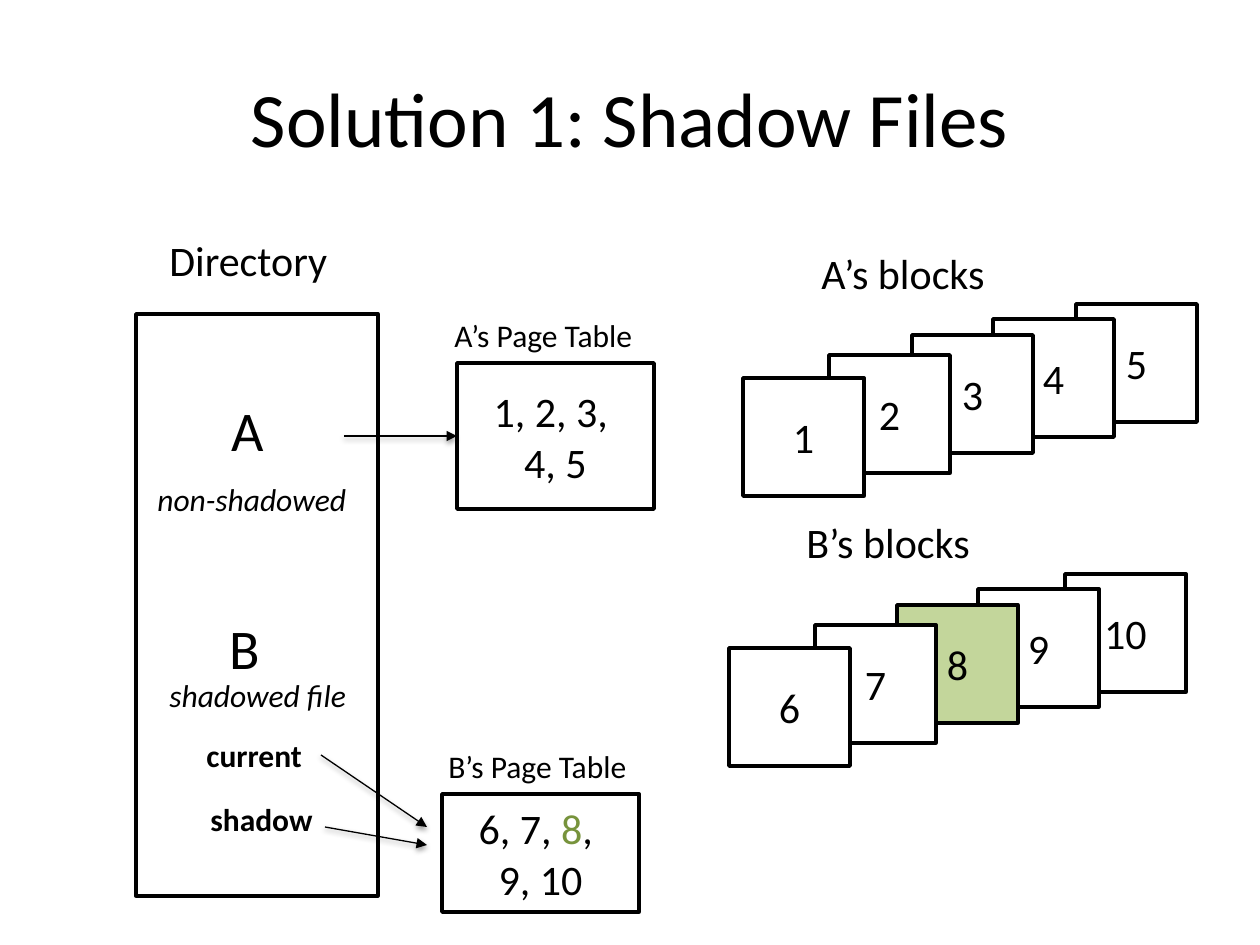
from lxml.etree import SubElement
from pptx import Presentation
from pptx.dml.color import RGBColor
from pptx.enum.shapes import MSO_CONNECTOR, MSO_SHAPE
from pptx.enum.text import MSO_ANCHOR, PP_ALIGN
from pptx.oxml.ns import qn
from pptx.util import Pt

PX = 914400 / 126
BLACK = RGBColor(0x00, 0x00, 0x00)
WHITE = RGBColor(0xFF, 0xFF, 0xFF)
LIGHT_GREEN = RGBColor(0xC3, 0xD6, 0x9B)
GREEN = RGBColor(0x77, 0x93, 0x3C)


def emu(*lengths):
    return [round(n * PX) for n in lengths]


def write(sp, lines, size, centred=True, **style):
    """Fill a shape with lines, each a list of (text, colour) runs."""
    tf = sp.text_frame
    tf.vertical_anchor = MSO_ANCHOR.MIDDLE if centred else MSO_ANCHOR.TOP
    for i, line in enumerate(lines):
        p = tf.add_paragraph() if i else tf.paragraphs[0]
        p.alignment = PP_ALIGN.CENTER if centred else PP_ALIGN.LEFT
        for text, color in line:
            r = p.add_run()
            r.text = text
            r.font.color.rgb = color
            for name, value in {"name": "Calibri", "size": Pt(size), **style}.items():
                setattr(r.font, name, value)


prs = Presentation()
prs.slide_width, prs.slide_height = emu(1260, 945)
s = prs.slides.add_slide(prs.slide_layouts[6])

title = s.shapes.add_textbox(*emu(63, 38, 1134, 158))
title.text_frame.word_wrap = True
write(title, [[("Solution 1: Shadow Files", BLACK)]], 44)

# Rectangles, back to front: directory, page tables, stacked blocks
rects = [
    (136, 314, 242, 582, WHITE, []),
    (457, 363, 197, 146, WHITE, [[("1, 2, 3, ", BLACK)], [("4, 5", BLACK)]]),
    (442, 794, 197, 118, WHITE,
     [[("6, 7, ", BLACK), ("8", GREEN), (", ", BLACK)], [("9, 10", BLACK)]]),
]
BLOCK_TOPS = [378, 355, 335, 319, 304]
stacks = [
    (1, 0, [743, 829, 912, 993, 1076]),
    (6, 270, [729, 815, 897, 978, 1065]),
]
for first, drop, lefts in stacks:
    blocks = list(enumerate(zip(lefts, BLOCK_TOPS), first))
    for number, (x, y) in reversed(blocks):
        fill = LIGHT_GREEN if number == 8 else WHITE
        rects.append((x, y + drop, 121, 118, fill, [[(str(number), BLACK)]]))

shapes = []
for x, y, w, h, fill, lines in rects:
    sp = s.shapes.add_shape(MSO_SHAPE.RECTANGLE, *emu(x, y, w, h))
    sp.shadow.inherit = False
    sp.fill.solid()
    sp.fill.fore_color.rgb = fill
    sp.line.color.rgb = BLACK
    sp.line.width = Pt(2)
    write(sp, lines, 24)
    shapes.append(sp)
a_table = shapes[1]

labels = [
    ("Directory", 157, 228, 186, 63, 24, {}),
    ("A’s blocks", 809, 241, 195, 63, 24, {}),
    ("B’s blocks", 794, 510, 194, 63, 24, {}),
    ("A", 219, 389, 58, 81, 32, {}),
    ("B", 217, 607, 58, 81, 32, {}),
    ("non-shadowed", 145, 474, 224, 50, 18, {"italic": True}),
    ("shadowed file", 157, 670, 212, 50, 18, {"italic": True}),
    ("current", 194, 730, 122, 50, 18, {"bold": True}),
    ("shadow", 198, 794, 129, 50, 18, {"bold": True}),
    ("A’s Page Table", 442, 310, 212, 50, 18, {}),
    ("B’s Page Table", 436, 741, 212, 50, 18, {}),
]
for text, x, y, w, h, size, style in labels:
    sp = s.shapes.add_textbox(*emu(x, y, w, h))
    sp.text_frame.word_wrap = False
    write(sp, [[(text, BLACK)]], size, centred=False, **style)

arrows = [
    (344, 436, 457, 436, a_table),
    (321, 755, 427, 827, None),
    (325, 827, 427, 845, None),
]
for x1, y1, x2, y2, target in arrows:
    arrow = s.shapes.add_connector(MSO_CONNECTOR.STRAIGHT, *emu(x1, y1, x2, y2))
    if target is not None:
        arrow.end_connect(target, 1)
    arrow.line.color.rgb = BLACK
    arrow.line.width = Pt(0.75)
    SubElement(arrow.line._get_or_add_ln(), qn("a:tailEnd"), type="triangle")
    effects = SubElement(arrow._element.spPr, qn("a:effectLst"))
    shadow = SubElement(effects, qn("a:outerShdw"), blurRad=str(Pt(3.1)),
                        dist=str(Pt(1.6)), dir="5400000", rotWithShape="0")
    color = SubElement(shadow, qn("a:srgbClr"), val=str(BLACK))
    SubElement(color, qn("a:alpha"), val="38000")

prs.save("out.pptx")
